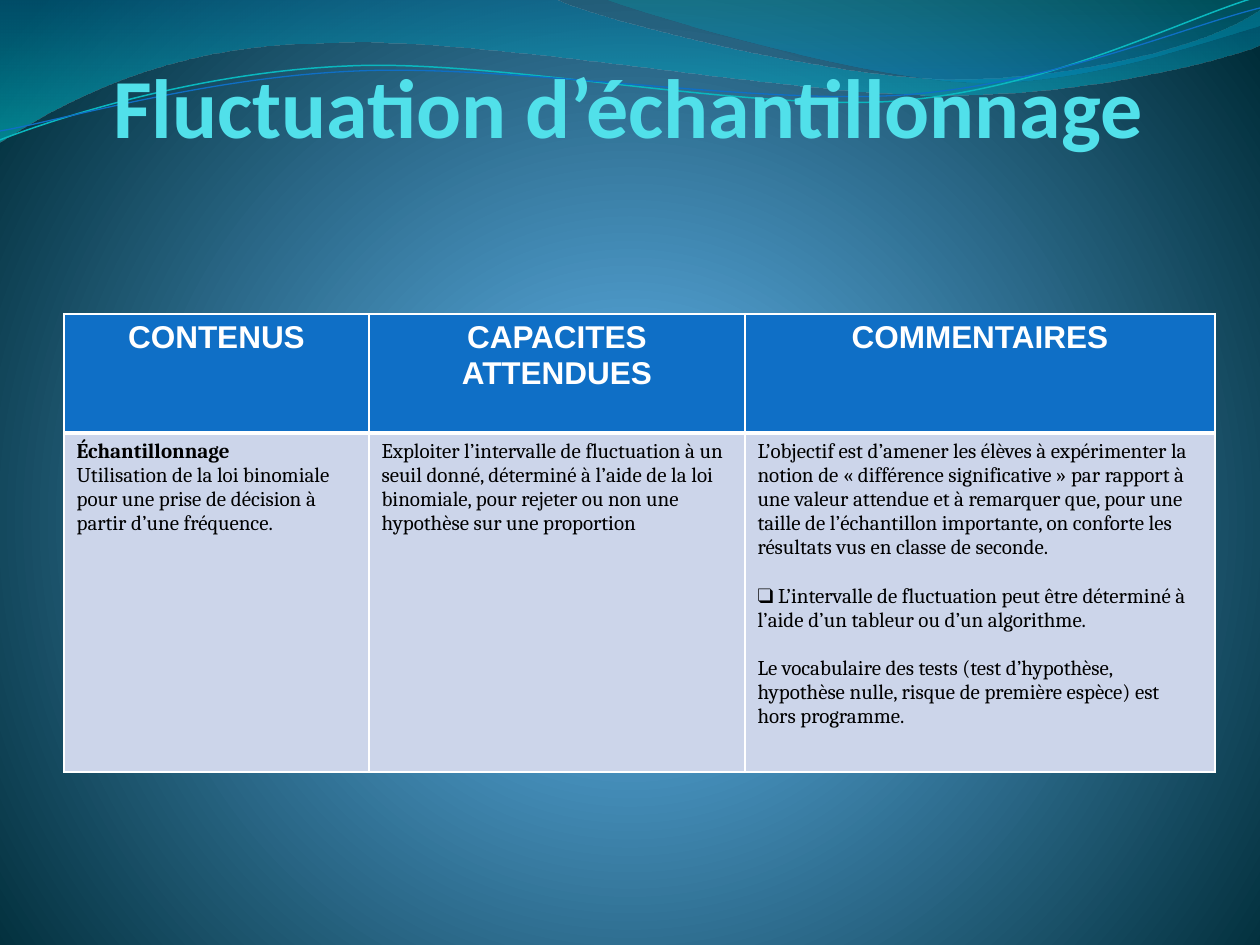
import math

from lxml import etree
from pptx import Presentation
from pptx import util as u
from pptx.dml.color import RGBColor
from pptx.enum import text
from pptx.oxml.ns import qn

WHITE = RGBColor(0xFF, 0xFF, 0xFF)
BLACK = RGBColor(0x00, 0x00, 0x00)
CYAN = RGBColor(0x51, 0xE0, 0xEA)
BLUE = RGBColor(0x0F, 0x6F, 0xC6)
TEAL = RGBColor(0x0A, 0xB8, 0xBF)
PALE = RGBColor(0xCC, 0xD5, 0xEA)

TITLE = "Fluctuation d’échantillonnage"
HEADERS = ["CONTENUS", "CAPACITES ATTENDUES", "COMMENTAIRES"]
BODY = [
    ["Échantillonnage",
     "Utilisation de la loi binomiale pour une prise de décision à partir d’une fréquence."],
    ["Exploiter l’intervalle de fluctuation à un seuil donné, déterminé à l’aide de la loi "
     "binomiale, pour rejeter ou non une hypothèse sur une proportion"],
    ["L’objectif est d’amener les élèves à expérimenter la notion de « différence significative » "
     "par rapport à une valeur attendue et à remarquer que, pour une taille de l’échantillon "
     "importante, on conforte les résultats vus en classe de seconde.",
     " L’intervalle de fluctuation peut être déterminé à l’aide d’un tableur ou d’un algorithme.",
     "Le vocabulaire des tests (test d’hypothèse, hypothèse nulle, risque de première espèce) "
     "est hors programme."],
]
BOLD_ENTRY = BODY[0][0]
BULLET_ENTRY = BODY[2][1]
COLUMNS = [305, 376, 470]
ROWS = [119, 339]

BACKDROP = [(0, "4AA0D6", 100), (25, "4C98C7", 100), (100, "002C38", 100)]
WAVES = [
    ([(0, -1), (554, -1), (600, 21, 837, 79, 955, 79), (1075, 79, 1207, 47, 1260, 11),
      (1261, 45), (1239, 55, 1096, 96, 940, 95), (784, 95, 481, 35, 324, 43),
      (163, 44, 58, 105, -1, 142)],
     [(0, "0074A1", 45), (100, "00C6CF", 55)]),
    ([(604, -1), (641, 14, 859, 78, 969, 82), (1079, 87, 1211, 40, 1260, 26), (1260, 0)],
     [(0, "00A1A9", 30), (80, "008BBF", 45)]),
]
STRANDS = [
    ([(0, 140), (60, 117, 199, 72, 349, 66), (498, 59, 747, 112, 898, 101),
      (1050, 89, 1182, 19, 1257, -3)], (629, 72), TEAL, 0.85),
    ([(0, 131), (59, 121, 207, 77, 357, 71), (508, 64, 752, 105, 903, 95),
      (1053, 84, 1186, 26, 1260, 8)], (629, 74), BLUE, 0.75),
]
STRAND_TILT = -2.7


def px(length):
    return u.Emu(round(length * 914400 / 126))


def child(parent, tag, **attributes):
    return etree.SubElement(parent, qn(tag), {key: str(value) for key, value in attributes.items()})


def paint_gradient(fill, owner, stops, radial=False):
    fill.gradient()
    gradient = next(owner.iter(qn("a:gradFill")))
    for old in list(gradient):
        gradient.remove(old)
    stop_list = child(gradient, "a:gsLst")
    for position, color, opacity in stops:
        stop = child(stop_list, "a:gs", pos=position * 1000)
        shade = child(stop, "a:srgbClr", val=color)
        if opacity < 100:
            child(shade, "a:alpha", val=opacity * 1000)
    if radial:
        circle = child(gradient, "a:path", path="circle")
        child(circle, "a:fillToRect", l=10000, t=110000, r=10000, b=100000)
    else:
        child(gradient, "a:lin", ang=5400000, scaled=1)


def turn(point, centre, degrees):
    cosine, sine = math.cos(math.radians(degrees)), math.sin(math.radians(degrees))
    dx, dy = point[0] - centre[0], point[1] - centre[1]
    return centre[0] + dx * cosine - dy * sine, centre[1] + dx * sine + dy * cosine


def add_outline(shapes, segments, close, centre=(0, 0), tilt=0):
    points = [turn(segment[i:i + 2], centre, -tilt)
              for segment in segments for i in range(0, len(segment), 2)]
    points = [(px(x), px(y)) for x, y in points]
    builder = shapes.build_freeform(*points[0], scale=1.0)
    builder.add_line_segments(points[1:], close=close)
    outline = builder.convert_to_shape()
    outline.rotation = tilt % 360
    outline.shadow.inherit = False
    corners = iter(list(outline.element.iter(qn("a:lnTo"))))
    for segment in segments[1:]:
        corner = next(corners)
        if len(segment) == 6:
            corner.addprevious(curve := etree.Element(qn("a:cubicBezTo")))
            for part in (corner, next(corners), next(corners)):
                curve.append(part[0])
                part.getparent().remove(part)
    return outline


def style(para, font, size, color, bold):
    for span in para.runs:
        span.font.name = font
        span.font.size = u.Pt(size)
        span.font.color.rgb = color
        span.font.bold = bold


def style_cell(cell, fill, bottom):
    properties = cell._tc.get_or_add_tcPr()
    for side, width in (("L", 1), ("R", 1), ("T", 1), ("B", bottom)):
        border = child(properties, "a:ln" + side, w=u.Pt(width))
        child(child(border, "a:solidFill"), "a:srgbClr", val=WHITE)
    cell.fill.solid()
    cell.fill.fore_color.rgb = fill


def add_title(page):
    title = page.shapes.title
    title.left, title.top, title.width, title.height = px(94), px(37), px(1071), px(118)
    frame = title.text_frame
    frame.text = TITLE
    frame.auto_size = text.MSO_AUTO_SIZE.NONE
    frame.vertical_anchor = text.MSO_ANCHOR.BOTTOM
    frame.margin_left = frame.margin_top = frame.margin_bottom = 0
    frame.margin_right = px(2)
    para = frame.paragraphs[0]
    para.alignment = text.PP_ALIGN.CENTER
    style(para, "Calibri", 48, CYAN, True)


def add_programme(page):
    table = page.shapes.add_table(len(ROWS), len(COLUMNS), px(64), px(314),
                                  px(sum(COLUMNS)), px(sum(ROWS))).table
    for row, height in zip(table.rows, ROWS):
        row.height = px(height)
    for index, (header, entries) in enumerate(zip(HEADERS, BODY)):
        table.columns[index].width = px(COLUMNS[index])

        cell = table.cell(0, index)
        style_cell(cell, BLUE, 3)
        cell.text_frame.text = header
        para = cell.text_frame.paragraphs[0]
        para.alignment = text.PP_ALIGN.CENTER
        style(para, "Arial", 18, WHITE, True)

        cell = table.cell(1, index)
        style_cell(cell, PALE, 1)
        cell.text_frame.text = "\n".join(entries)
        for number, (para, entry) in enumerate(zip(cell.text_frame.paragraphs, entries)):
            style(para, "Cambria", 12, BLACK, entry == BOLD_ENTRY)
            if number and entries[0] != BOLD_ENTRY:
                para.space_before = u.Pt(13.8)
            if entry == BULLET_ENTRY:
                properties = para._p.get_or_add_pPr()
                child(properties, "a:buFont", typeface="Cambria")
                child(properties, "a:buChar", char="❑")


def main():
    deck = Presentation()
    deck.slide_width, deck.slide_height = px(1260), px(945)
    page = deck.slides.add_slide(deck.slide_layouts[0])
    subtitle = page.placeholders[1].element
    subtitle.getparent().remove(subtitle)

    paint_gradient(page.background.fill, page.element, BACKDROP, radial=True)
    for segments, stops in WAVES:
        wave = add_outline(page.shapes, segments, True)
        paint_gradient(wave.fill, wave.element, stops)
        wave.line.fill.background()
    strands = page.shapes.add_group_shape()
    for segments, centre, color, width in STRANDS:
        strand = add_outline(strands.shapes, segments, False, centre, STRAND_TILT)
        strand.fill.background()
        strand.line.color.rgb = color
        strand.line.width = u.Pt(width)

    add_title(page)
    title = page.shapes.title.element
    title.getparent().append(title)
    add_programme(page)
    deck.save("out.pptx")


if __name__ == "__main__":
    main()
